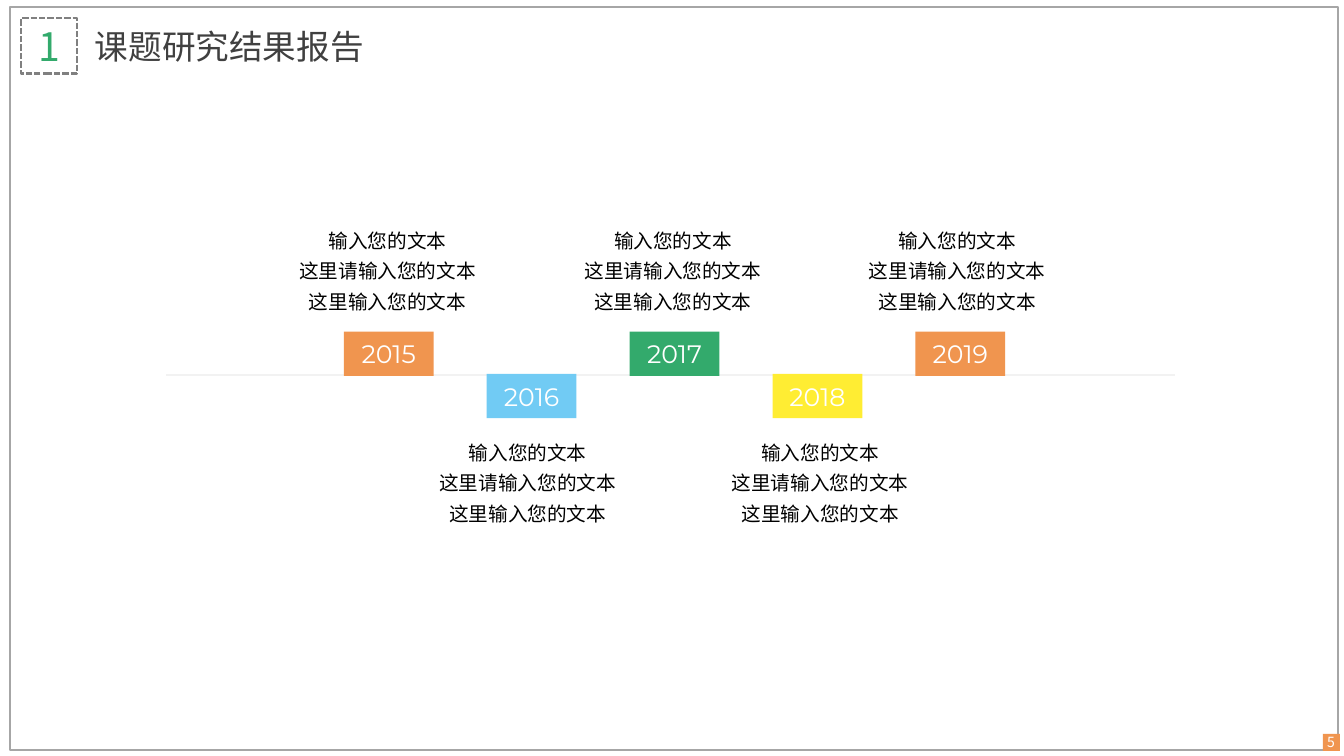
from lxml.etree import SubElement
from pptx import Presentation
from pptx.dml.color import RGBColor
from pptx.enum.dml import MSO_LINE as Dash
from pptx.enum.shapes import MSO_CONNECTOR as Conn, MSO_SHAPE as Kind
from pptx.enum.text import MSO_ANCHOR as Anchor, MSO_AUTO_SIZE as Fit, PP_ALIGN as Align
from pptx.oxml.ns import qn
from pptx.util import Inches, Pt

ORANGE = RGBColor(0xF0, 0x95, 0x4F)
GREEN = RGBColor(0x33, 0xAA, 0x6C)
BLUE = RGBColor(0x71, 0xCB, 0xF4)
YELLOW = RGBColor(0xFF, 0xED, 0x33)
WHITE = RGBColor(0xFF, 0xFF, 0xFF)
BLACK = RGBColor(0, 0, 0)
DARK = RGBColor(0x40, 0x40, 0x40)
GREY = RGBColor(0x80, 0x80, 0x80)
EDGE = RGBColor(0xA6, 0xA6, 0xA6)
PALE = RGBColor(0xF2, 0xF2, 0xF2)
HAN = "Noto Sans CJK SC"
LATIN = "Montserrat"

TITLE = "课题研究结果报告"
NUMBER = "1"
PAGE = "5"
NOTE = ["输入您的文本", "这里请输入您的文本", "这里输入您的文本"]
YEARS = [
    ("2015", ORANGE, 2.91),
    ("2016", BLUE, 4.3),
    ("2017", GREEN, 5.74),
    ("2018", YELLOW, 7.2),
    ("2019", ORANGE, 8.56),
]
FIRST, LAST = 3.41, 9.08
STEP = (LAST - FIRST) / (len(YEARS) - 1)
ABOVE = (3.29, 2.2, Anchor.BOTTOM)
BELOW = (3.71, 4.3, Anchor.TOP)


def write(shape, lines, size, color, font=HAN, align=Align.CENTER,
          anchor=Anchor.MIDDLE, inset=None, space=None):
    frame = shape.text_frame
    frame.text = "\n".join(lines)
    frame.word_wrap = True
    frame.auto_size = Fit.NONE
    frame.vertical_anchor = anchor
    if inset is not None:
        frame.margin_left = frame.margin_right = Inches(inset)
        frame.margin_top = frame.margin_bottom = Inches(inset)
    for para in frame.paragraphs:
        para.alignment = align
        if space:
            para.line_spacing = space
        para.font.size = Pt(size)
        para.font.name = font
        para.font.color.rgb = color
        props = para._p.pPr.find(qn("a:defRPr"))
        SubElement(props, qn("a:ea")).set("typeface", font)


def box(slide, area, fill=None, line=None, width=1):
    shape = slide.shapes.add_shape(Kind.RECTANGLE, *map(Inches, area))
    shape.shadow.inherit = False
    if fill is None:
        shape.fill.background()
    else:
        shape.fill.solid()
        shape.fill.fore_color.rgb = fill
    if line is None:
        shape.line.fill.background()
    else:
        shape.line.color.rgb = line
        shape.line.width = Pt(width)
    return shape


def label(slide, area):
    return slide.shapes.add_textbox(*map(Inches, area))


def header(slide):
    box(slide, (0.1, 0.07, 13.17, 7.37), line=EDGE)
    badge = box(slide, (0.21, 0.18, 0.55, 0.55), line=GREY, width=1.5)
    badge.line.dash_style = Dash.SQUARE_DOT
    write(badge, [NUMBER], 28, GREEN, inset=0)
    title = slide.shapes.title
    title.left, title.top = Inches(0.84), Inches(0.18)
    title.width, title.height = Inches(3.59), Inches(0.55)
    write(title, [TITLE], 24, DARK, align=Align.LEFT)
    box(slide, (13.12, 7.28, 0.17, 0.17), ORANGE)
    write(label(slide, (12.98, 7.28, 0.44, 0.17)), [PAGE], 10, WHITE)


def timeline(slide):
    ends = map(Inches, (1.65, 3.72, 11.65, 3.72))
    axis = slide.shapes.add_connector(Conn.STRAIGHT, *ends)
    axis.line.color.rgb = PALE
    axis.line.width = Pt(1.75)
    SubElement(axis._element.spPr, qn("a:effectLst"))
    for i, (year, color, left) in enumerate(YEARS):
        top, high, anchor = BELOW if i % 2 else ABOVE
        tag = box(slide, (FIRST + i * STEP, top, 0.89, 0.44), color)
        write(tag, [year], 18, WHITE, LATIN)
        note = label(slide, (left, high, 1.87, 0.91))
        write(note, NOTE, 14, BLACK, anchor=anchor, inset=0, space=1.3)


def main():
    deck = Presentation()
    deck.slide_width, deck.slide_height = Inches(13.33), Inches(7.5)
    slide = deck.slides.add_slide(deck.slide_layouts[5])
    header(slide)
    timeline(slide)
    deck.save("out.pptx")


if __name__ == "__main__":
    main()
